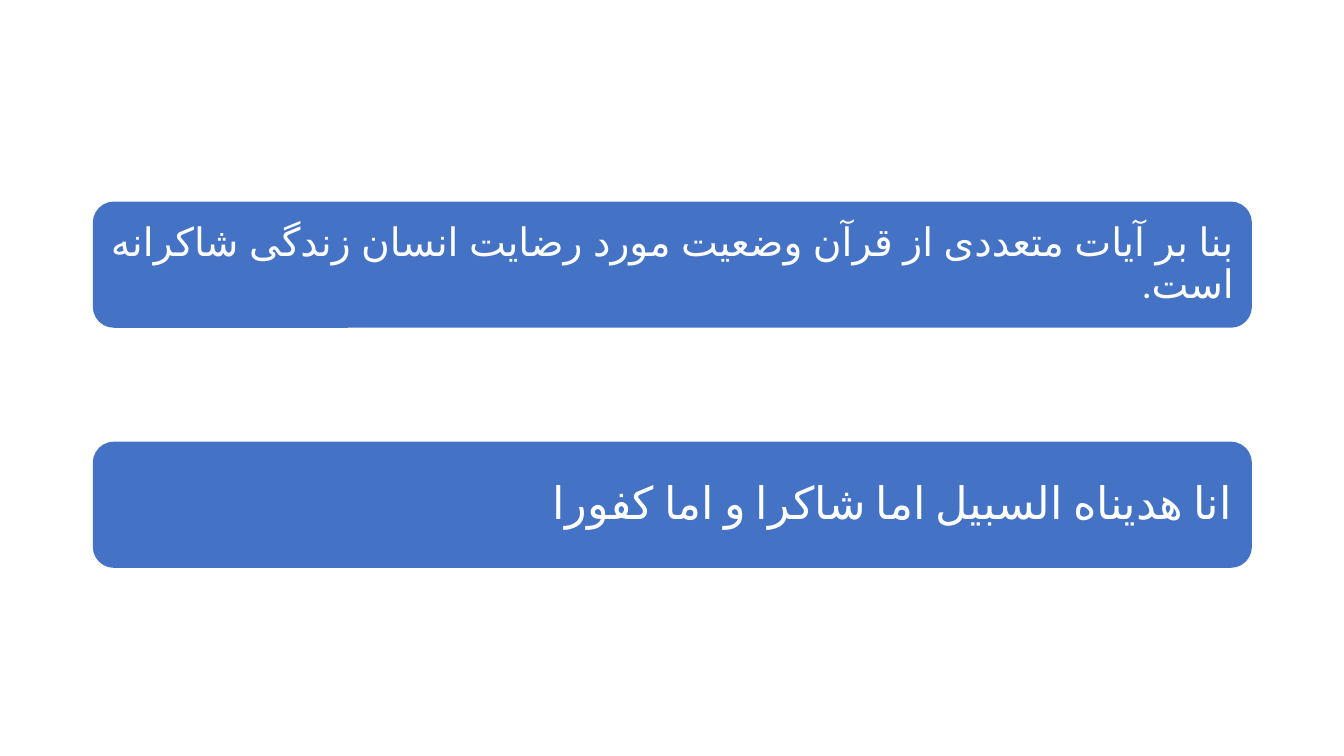
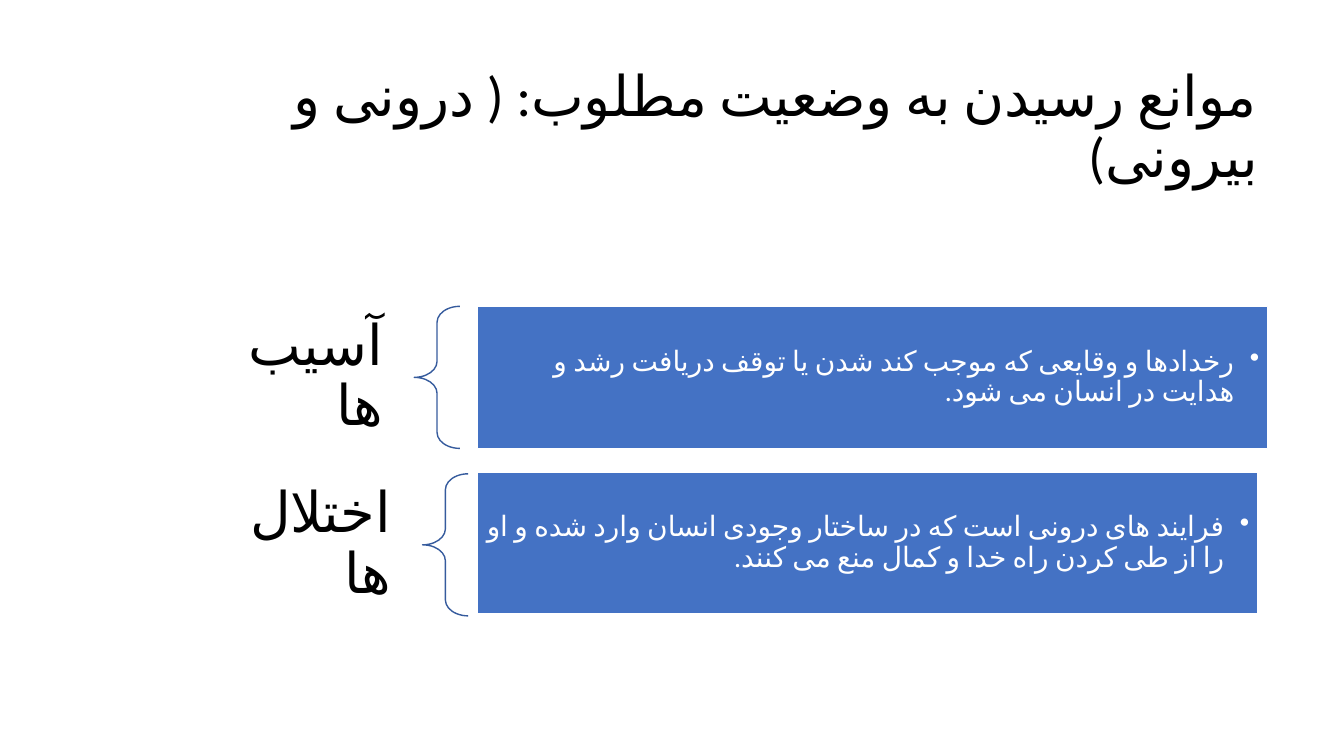
from lxml.etree import SubElement
from pptx import Presentation
from pptx.dml.color import RGBColor
from pptx.enum.shapes import MSO_SHAPE
from pptx.enum.text import MSO_ANCHOR, MSO_AUTO_SIZE, PP_ALIGN
from pptx.oxml.ns import qn
from pptx.util import Cm, Pt

BLUE = RGBColor(0x44, 0x72, 0xC4)
BRACE_BLUE = RGBColor(0x36, 0x5B, 0x9D)
WHITE = RGBColor(0xFF, 0xFF, 0xFF)
BLACK = RGBColor(0, 0, 0)
FONT = "Calibri"
LANGUAGE = "fa-IR"

STATEMENTS = [
    ("بنا بر آیات متعددی از قرآن وضعیت مورد رضایت انسان زندگی شاکرانه است.", 28, 0.3),
    ("انا هدیناه السبیل اما شاکرا و اما کفورا", 32, 0.33),
]
TITLE = "موانع رسیدن به وضعیت مطلوب: ( درونی و بیرونی)"
OBSTACLES = [
    {
        "label": "آسیب ها",
        "detail": "رخدادها و وقایعی که موجب کند شدن یا توقف دریافت رشد و هدایت در انسان می شود.",
        "label_top": 7.72, "label_width": 5.69, "detail_top": 7.72, "detail_width": 19.91,
    },
    {
        "label": "اختلال ها",
        "detail": "فرایند های درونی است که در ساختار وجودی انسان وارد شده و او را از طی کردن راه خدا و کمال منع می کنند.",
        "label_top": 11.94, "label_width": 5.9, "detail_top": 11.89, "detail_width": 19.66,
    },
]

CONTENT_WIDTH = 29.21
CARD_LEFT, CARD_TOP, CARD_HEIGHT, CARD_PITCH = 2.34, 5.08, 3.18, 6.05
LABEL_LEFT, DETAIL_LEFT, ROW_HEIGHT, BRACE_WIDTH = 4.75, 12.04, 3.58, 1.15


def write(shape, text, size, color, insets, align=PP_ALIGN.RIGHT, rtl=True, bullet=False):
    frame = shape.text_frame
    settings = {
        "word_wrap": True,
        "auto_size": MSO_AUTO_SIZE.NONE,
        "vertical_anchor": MSO_ANCHOR.MIDDLE,
        "margin_left": Cm(insets[0]),
        "margin_right": Cm(insets[0]),
        "margin_top": Cm(insets[1]),
        "margin_bottom": Cm(insets[1]),
    }
    for name, value in settings.items():
        setattr(frame, name, value)
    para = frame.paragraphs[0]
    para.alignment = align
    para.line_spacing = 0.9
    properties = para._p.get_or_add_pPr()
    if rtl:
        properties.set("rtl", "1")
    if bullet:
        para.level = 1
        properties.set("marL", str(Cm(0.64)))
        properties.set("indent", str(-Cm(0.64)))
        SubElement(properties, qn("a:buChar"), char="•")
    span = para.add_run()
    span.text = text
    for name, value in {"size": Pt(size), "name": FONT}.items():
        setattr(span.font, name, value)
    span.font.color.rgb = color
    span_properties = span._r.get_or_add_rPr()
    span_properties.set("lang", LANGUAGE)
    SubElement(span_properties, qn("a:cs"), typeface=FONT)


def add_shape(page, kind, area, fill=None, line=None):
    shape = page.shapes.add_shape(kind, *map(Cm, area))
    shape.shadow.inherit = False
    if fill is None:
        shape.fill.background()
    else:
        shape.fill.solid()
        shape.fill.fore_color.rgb = fill
    if line is None:
        shape.line.fill.background()
    else:
        shape.line.color.rgb = line
        shape.line.width = Pt(1)
    return shape


def add_statements(deck):
    page = deck.slides.add_slide(deck.slide_layouts[6])
    for index, (text, size, inset) in enumerate(STATEMENTS):
        area = (CARD_LEFT, CARD_TOP + index * CARD_PITCH, CONTENT_WIDTH, CARD_HEIGHT)
        card = add_shape(page, MSO_SHAPE.ROUNDED_RECTANGLE, area, BLUE)
        write(card, text, size, WHITE, (inset, inset), PP_ALIGN.JUSTIFY)


def add_obstacles(deck):
    page = deck.slides.add_slide(deck.slide_layouts[5])
    title = page.shapes.title
    place = {"left": 2.74, "top": 0.43, "width": CONTENT_WIDTH, "height": 5.64}
    for name, value in place.items():
        setattr(title, name, Cm(value))
    write(title, TITLE, 40, BLACK, (0.25, 0.13))
    for row in OBSTACLES:
        top, width = row["label_top"], row["label_width"]
        label = page.shapes.add_textbox(*map(Cm, (LABEL_LEFT, top, width, ROW_HEIGHT)))
        write(label, row["label"], 40, BLACK, (0.79, 0.28), rtl=False)
        brace_area = (LABEL_LEFT + width, top, BRACE_WIDTH, ROW_HEIGHT)
        brace = add_shape(page, MSO_SHAPE.LEFT_BRACE, brace_area, line=BRACE_BLUE)
        brace.adjustments[0] = 0.35
        detail_area = (DETAIL_LEFT, row["detail_top"], row["detail_width"], ROW_HEIGHT)
        detail = add_shape(page, MSO_SHAPE.RECTANGLE, detail_area, BLUE, WHITE)
        write(detail, row["detail"], 20, WHITE, (0.2, 0.2), bullet=True)


def main():
    deck = Presentation()
    deck.slide_width, deck.slide_height = Cm(33.87), Cm(19.05)
    add_statements(deck)
    add_obstacles(deck)
    deck.save("out.pptx")


if __name__ == "__main__":
    main()
